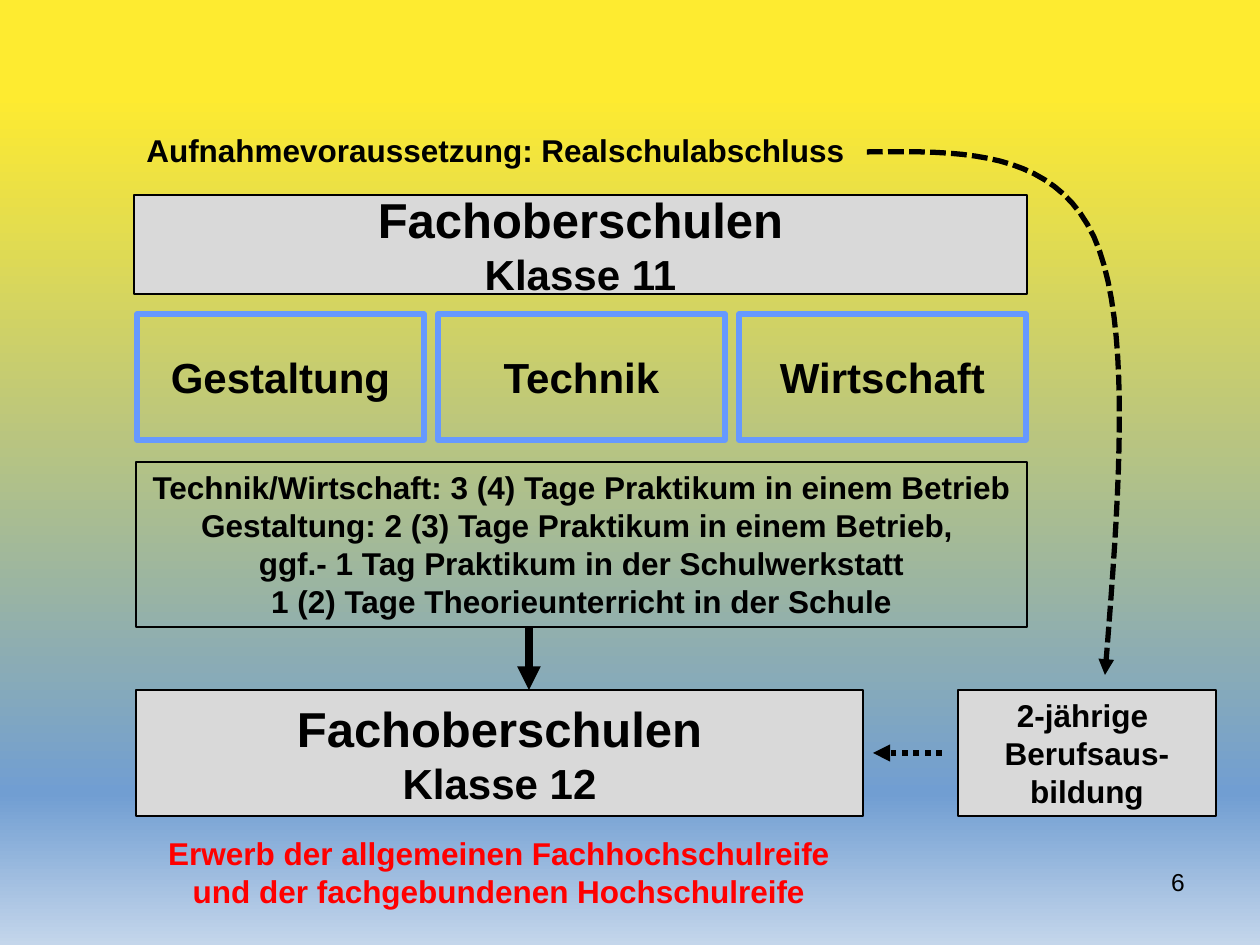
from dataclasses import dataclass

from lxml import etree
from pptx import Presentation
from pptx.dml.color import RGBColor
from pptx.enum.dml import MSO_LINE
from pptx.enum.shapes import MSO_CONNECTOR, MSO_SHAPE
from pptx.enum.text import MSO_ANCHOR, PP_ALIGN
from pptx.oxml import parse_xml
from pptx.oxml.ns import nsdecls, qn
from pptx.util import Pt

RECT = MSO_SHAPE.RECTANGLE
STRAIGHT = MSO_CONNECTOR.STRAIGHT
LEFT, CENTER, RIGHT = PP_ALIGN.LEFT, PP_ALIGN.CENTER, PP_ALIGN.RIGHT
TOP, MIDDLE = MSO_ANCHOR.TOP, MSO_ANCHOR.MIDDLE
DOT, DASH = MSO_LINE.ROUND_DOT, MSO_LINE.SQUARE_DOT
SCALE = 914400 / 126


@dataclass(frozen=True)
class Theme:
    """Colours, font and type sizes of the slide."""
    font: str = "Arial"
    ink: str = "000000"
    panel: str = "D9D9D9"
    track: str = "6699FF"
    goal: str = "FF0000"
    sky: tuple = ((10, "FEEB30"), (84, "719ED2"), (100, "C4D6EB"))
    heading: int = 28
    label: int = 24
    body: int = 18
    page: int = 14


THEME = Theme()


def px(n):
    """Turn pixels into EMU."""
    return round(n * SCALE)


def rgb(code):
    """Turn a hex code into a colour."""
    return RGBColor.from_string(code)


def set_background(s):
    """Fill the slide with the vertical gradient."""
    stops = "".join(f'<a:gs pos="{pos * 1000}"><a:srgbClr val="{code}"/></a:gs>'
                    for pos, code in THEME.sky)
    fill = s.background.fill
    fill.solid()
    bg_pr = s._element.cSld.find(qn("p:bg")).find(qn("p:bgPr"))
    grad = parse_xml(f'<a:gradFill {nsdecls("a")} rotWithShape="1"><a:gsLst>{stops}'
                     '</a:gsLst><a:lin ang="5400000" scaled="0"/></a:gradFill>')
    bg_pr.replace(bg_pr.find(qn("a:solidFill")), grad)


def write(sp, lines, size=THEME.body, sizes=None, color=THEME.ink, bold=True,
          align=CENTER, anchor=TOP, wrap=True):
    """Write one paragraph per line, each with its own size if sizes is given."""
    tf = sp.text_frame
    tf.word_wrap = wrap
    tf.vertical_anchor = anchor
    for i, (line, pt) in enumerate(zip(lines, sizes or [size] * len(lines))):
        p = tf.add_paragraph() if i else tf.paragraphs[0]
        p.text = line
        p.alignment = align
        for r in p.runs:
            r.font.name = THEME.font
            r.font.size = Pt(pt)
            r.font.bold = bold
            r.font.color.rgb = rgb(color)


def add_text(s, box, lines, **fmt):
    """Add a text box."""
    write(s.shapes.add_textbox(*map(px, box)), lines, **fmt)


def add_box(s, box, lines, fill=None, line=THEME.ink, width=0.75, **fmt):
    """Add an outlined rectangle with text."""
    sp = s.shapes.add_shape(RECT, *map(px, box))
    sp.shadow.inherit = False
    if fill:
        sp.fill.solid()
        sp.fill.fore_color.rgb = rgb(fill)
    else:
        sp.fill.background()
    sp.line.color.rgb = rgb(line)
    sp.line.width = Pt(width)
    write(sp, lines, **fmt)


def style_arrow(sp, width, dash=None):
    """Give a line its stroke and a triangle at its end."""
    sp.line.color.rgb = rgb(THEME.ink)
    sp.line.width = Pt(width)
    if dash:
        sp.line.dash_style = dash
    etree.SubElement(sp.line._get_or_add_ln(), qn("a:tailEnd"), type="triangle")


def add_arrow(s, start, end, width, dash=None):
    """Add a straight arrow."""
    sp = s.shapes.add_connector(STRAIGHT, *map(px, start + end))
    style_arrow(sp, width, dash)
    etree.SubElement(sp._element.spPr, qn("a:effectLst"))


def bezier(a, b, c, d, steps=20):
    """Return points along a cubic curve, without its start."""
    ts = [i / steps for i in range(1, steps + 1)]
    return [tuple(px((1 - t) ** 3 * k + 3 * t * (1 - t) ** 2 * m
                     + 3 * t * t * (1 - t) * n + t ** 3 * o)
                  for k, m, n, o in zip(a, b, c, d)) for t in ts]


def add_curve(s, points, width, dash):
    """Add a curved arrow through chained cubic control points."""
    fb = s.shapes.build_freeform(*map(px, points[0]))
    for i in range(0, len(points) - 1, 3):
        fb.add_line_segments(bezier(*points[i:i + 4]), close=False)
    sp = fb.convert_to_shape()
    sp.shadow.inherit = False
    sp.fill.background()
    style_arrow(sp, width, dash)


def main():
    """Build and save the slide."""
    prs = Presentation()
    prs.slide_width, prs.slide_height = px(1260), px(945)
    s = prs.slides.add_slide(prs.slide_layouts[6])
    set_background(s)

    panel = dict(fill=THEME.panel, anchor=MIDDLE, wrap=False)
    school_sizes = (THEME.heading, THEME.label)
    add_text(s, (134, 125, 746, 50), ["Aufnahmevoraussetzung: Realschulabschluss"],
             align=LEFT)
    add_box(s, (134, 195, 893, 99), ["Fachoberschulen", "Klasse 11"],
            sizes=school_sizes, **panel)
    for i, track in enumerate(("Gestaltung", "Technik", "Wirtschaft")):
        add_box(s, (137 + 301 * i, 314, 287, 126), [track], line=THEME.track,
                width=3, size=THEME.label, anchor=MIDDLE, wrap=False)
    add_box(s, (136, 462, 891, 165),
            ["Technik/Wirtschaft: 3 (4) Tage Praktikum in einem Betrieb\v"
             "Gestaltung: 2 (3) Tage Praktikum in einem Betrieb, ",
             "ggf.- 1 Tag Praktikum in der Schulwerkstatt",
             "1 (2) Tage Theorieunterricht in der Schule"], width=1)
    add_box(s, (136, 690, 727, 126), ["Fachoberschulen", "Klasse 12"],
            sizes=school_sizes, **panel)
    add_box(s, (958, 690, 258, 126), ["2-jährige ", "Berufsaus-\vbildung"], **panel)
    add_text(s, (155, 828, 688, 89),
             ["Erwerb der allgemeinen Fachhochschulreife "
              "und der fachgebundenen Hochschulreife"], color=THEME.goal)

    add_arrow(s, (529, 627), (529, 690), 4.5)
    add_arrow(s, (942, 753), (873, 753), 3.25, DOT)
    add_curve(s, [(867, 152), (960, 151), (1053, 149), (1094, 237),
                  (1133, 324), (1119, 500), (1105, 675)], 3, DASH)
    add_text(s, (903, 861, 294, 66), ["6"], size=THEME.page, bold=False, align=RIGHT)
    prs.save("out.pptx")


if __name__ == "__main__":
    main()
